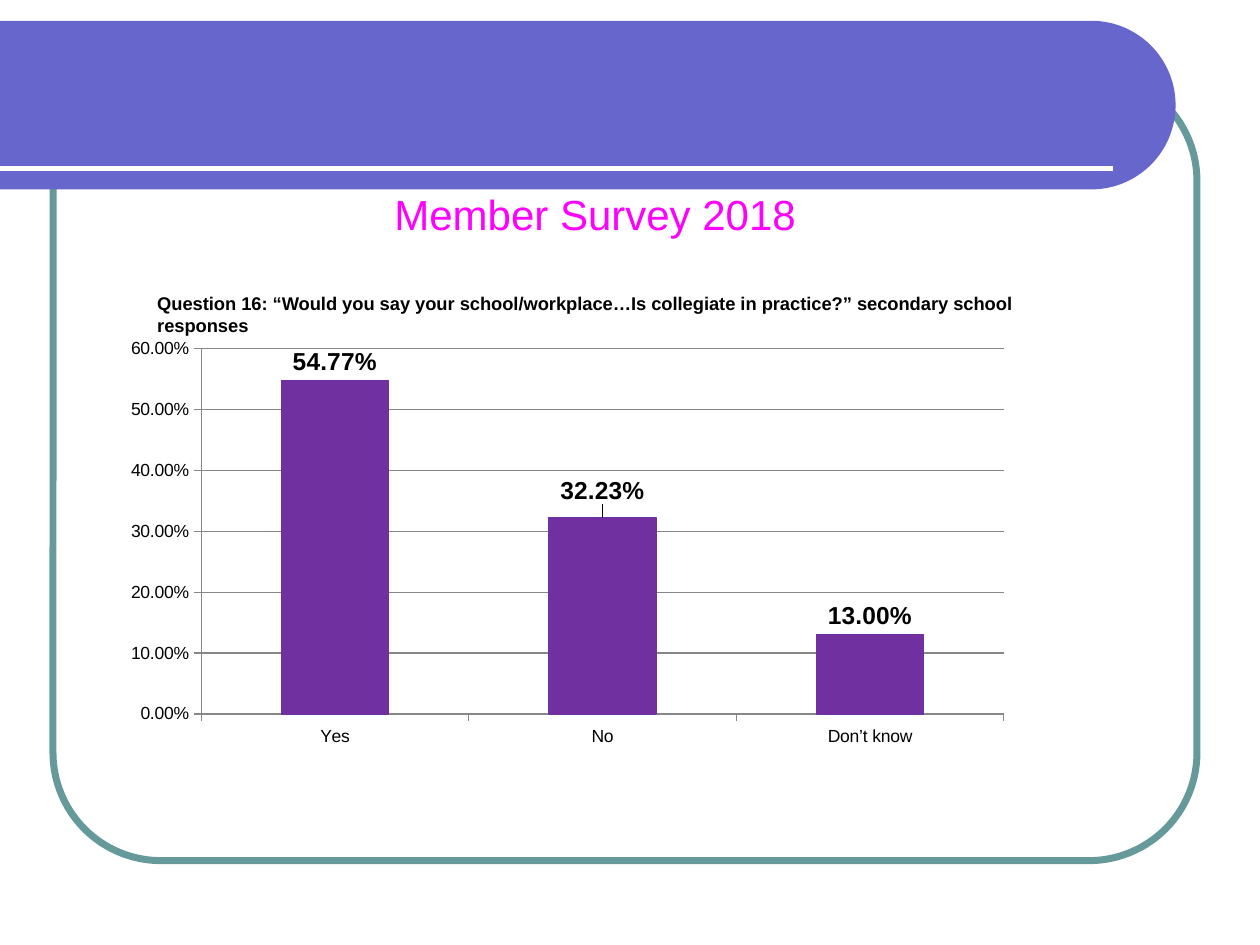
from math import cos, pi, sin

from lxml import etree
from pptx import Presentation
from pptx.chart.data import CategoryChartData
from pptx.dml.color import RGBColor
from pptx.enum.chart import XL_CHART_TYPE, XL_LABEL_POSITION, XL_TICK_MARK
from pptx.enum.shapes import MSO_CONNECTOR, MSO_SHAPE
from pptx.oxml import parse_xml
from pptx.oxml.ns import nsdecls, qn
from pptx.util import Cm, Pt

COLUMNS = XL_CHART_TYPE.COLUMN_CLUSTERED
ABOVE_BAR = XL_LABEL_POSITION.OUTSIDE_END
TICK_OUT = XL_TICK_MARK.OUTSIDE
STRAIGHT = MSO_CONNECTOR.STRAIGHT
ROUNDED = MSO_SHAPE.ROUNDED_RECTANGLE

# Content
FONT = "Arial"
COLORS = {"frame": "669999", "banner": "6666CC", "rule": "FFFFFF", "text": "000000",
          "title": "FF00FF", "bar": "7030A0", "grid": "878787"}
TITLE = "Member Survey 2018"
QUESTION = ("Question 16: “Would you say your school/workplace…Is collegiate in practice?” "
            "secondary school responses")
RESPONSES = {"Yes": 0.5477, "No": 0.3223, "Don’t know": 0.13}
RAISED_ANSWER, RAISED_BY = 1, -0.02
PLOT_AREA = {"x": 0.077, "y": 0.022, "w": 0.9, "h": 0.886}


def color(name):
    return RGBColor.from_string(COLORS[name])


def style_font(font, size, name, bold=False):
    font.name, font.size, font.bold = FONT, Pt(size), bold
    font.color.rgb = color(name)


def style_line(line, name, width):
    line.color.rgb = color(name)
    line.width = Pt(width)


def add_text(slide, box, text, size, name, bold=False):
    frame = slide.shapes.add_textbox(*map(Cm, box)).text_frame
    frame.word_wrap = True
    frame.text = text
    style_font(frame.paragraphs[0].font, size, name, bold)


def manual_layout(**values):
    items = "".join(f'<c:{key} val="{value}"/>' for key, value in values.items())
    return parse_xml(f'<c:layout {nsdecls("c")}><c:manualLayout>{items}'
                     '</c:manualLayout></c:layout>')


prs = Presentation()
prs.slide_width, prs.slide_height = Cm(25.4), Cm(19.05)
slide = prs.slides.add_slide(prs.slide_layouts[6])

# Rounded frame
frame = slide.shapes.add_shape(ROUNDED, Cm(1.07), Cm(1.47), Cm(23.06), Cm(15.88))
frame.adjustments[0] = 0.137
frame.fill.background()
frame.shadow.inherit = False
style_line(frame.line, "frame", 4)

# Banner with a half-round right end
top, radius, center = 0.42, 1.7, 22.0
angles = [-pi / 2 + pi * step / 60 for step in range(61)]
arc = [(Cm(center + radius * cos(a)), Cm(top + radius + radius * sin(a))) for a in angles]
outline = slide.shapes.build_freeform(0, Cm(top))
outline.add_line_segments(arc + [(0, Cm(top + 2 * radius))], close=True)
banner = outline.convert_to_shape()
banner.fill.solid()
banner.fill.fore_color.rgb = color("banner")
banner.line.fill.background()
banner.shadow.inherit = False

rule = slide.shapes.add_connector(STRAIGHT, 0, Cm(3.39), Cm(22.43), Cm(3.39))
style_line(rule.line, "rule", 3)
etree.SubElement(rule._element.spPr, qn("a:effectLst"))

# Question and title
add_text(slide, (2.92, 5.77, 18.85, 1.14), QUESTION, 10.5, "text", bold=True)
add_text(slide, (7.7, 3.68, 8.9, 1.25), TITLE, 24, "title")

# Response chart
data = CategoryChartData(number_format="0.00%")
data.categories = list(RESPONSES)
data.add_series("Series 1", list(RESPONSES.values()))
chart = slide.shapes.add_chart(COLUMNS, Cm(2.64), Cm(6.83), Cm(18.01), Cm(8.33), data).chart
chart.has_legend = chart.has_title = False
style_font(chart.font, 10, "text")

plot_area = chart._chartSpace.chart.plotArea
for old_layout in plot_area.findall(qn("c:layout")):
    plot_area.remove(old_layout)
plot_area.insert(0, manual_layout(layoutTarget="inner", xMode="edge", yMode="edge",
                                  **PLOT_AREA))

values = chart.value_axis
values.minimum_scale, values.maximum_scale, values.major_unit = 0, 0.6, 0.1
values.tick_labels.number_format = "0.00%"
values.tick_labels.number_format_is_linked = False
values.has_major_gridlines = True
style_line(values.major_gridlines.format.line, "grid", 0.75)
for axis in (values, chart.category_axis):
    axis.major_tick_mark = TICK_OUT
    style_line(axis.format.line, "grid", 0.75)

plot = chart.plots[0]
plot.gap_width = 150
plot.vary_by_categories = False
bars = plot.series[0]
bars.format.fill.solid()
bars.format.fill.fore_color.rgb = color("bar")
style_line(bars.format.line, "bar", 0.75)

# Value labels, one of them raised off its bar
for index in range(len(RESPONSES)):
    label = bars.points[index].data_label
    style_font(label.font, 14, "text", bold=True)
    label.position = ABOVE_BAR
raised = bars.data_labels._element.findall(qn("c:dLbl"))[RAISED_ANSWER]
raised.insert(1, manual_layout(x=0, y=RAISED_BY))

prs.save("out.pptx")
